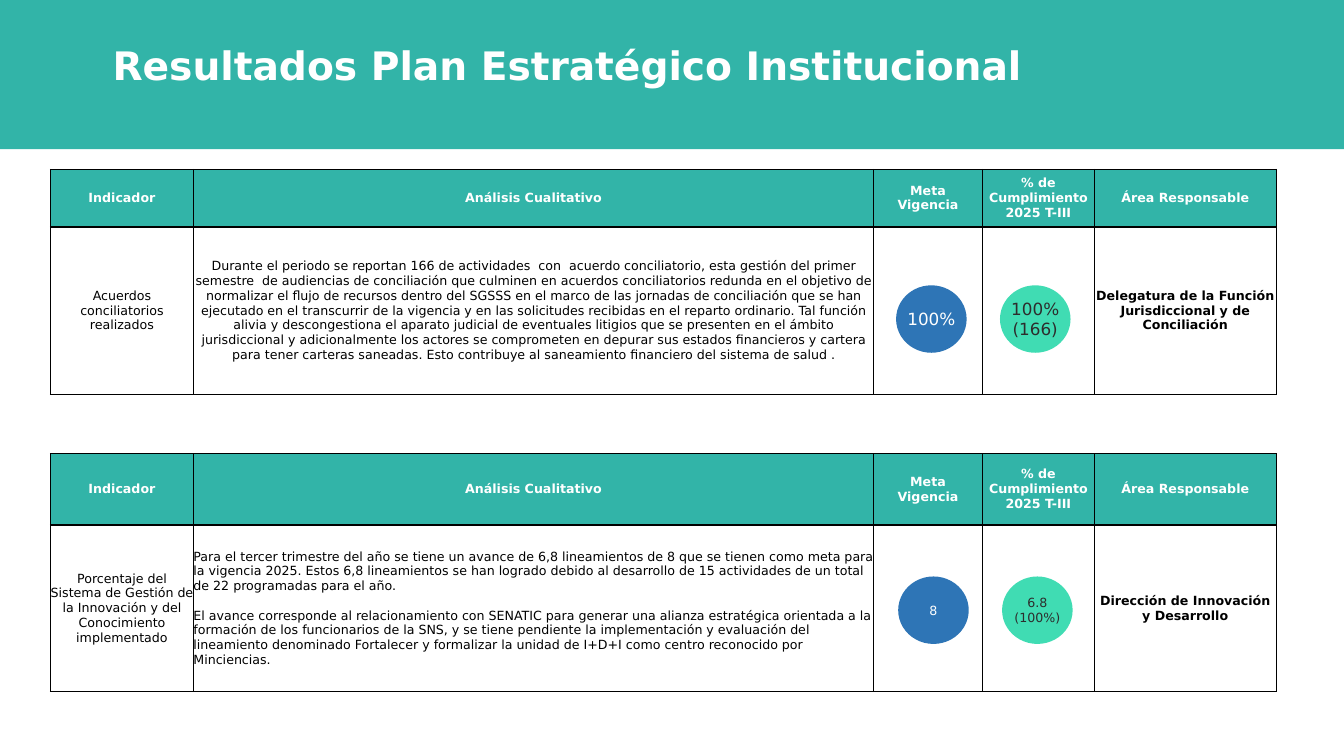
from lxml import etree
from pptx import Presentation
from pptx.dml.color import RGBColor
from pptx.enum.shapes import MSO_SHAPE
from pptx.enum.text import MSO_ANCHOR, MSO_AUTO_SIZE, PP_ALIGN
from pptx.oxml.ns import qn
from pptx.util import Pt

CENTER, LEFT = PP_ALIGN.CENTER, PP_ALIGN.LEFT
TOP, MIDDLE = MSO_ANCHOR.TOP, MSO_ANCHOR.MIDDLE
NO_AUTOFIT = MSO_AUTO_SIZE.NONE
RECTANGLE, OVAL = MSO_SHAPE.RECTANGLE, MSO_SHAPE.OVAL

FONT = "DejaVu Sans"
TEAL, BLUE, MINT = "32B4A8", "2E75B6", "40DCB3"
WHITE, BLACK, CHARCOAL = "FFFFFF", "000000", "2D2D2D"

TABLE_LEFT = 36
COLUMN_WIDTHS = [102.2, 485.8, 77.8, 79.9, 129.9]
HEADERS = ["Indicador", "Análisis Cualitativo", "Meta\vVigencia",
           "% de Cumplimiento 2025 T-III", "Área Responsable"]
CIRCLE_WIDTH, CIRCLE_HEIGHT, CIRCLE_STEP = 50.4, 48.2, 74.2

INDICATORS = [
    {
        "top": 121, "rows": [41, 120], "align": CENTER,
        "name": "Acuerdos conciliatorios realizados",
        "analysis": [
            "Durante el periodo se reportan 166 de actividades  con  acuerdo conciliatorio, "
            "esta gestión del primer semestre  de audiencias de conciliación que culminen en "
            "acuerdos conciliatorios redunda en el objetivo de normalizar el flujo de recursos "
            "dentro del SGSSS en el marco de las jornadas de conciliación que se han ejecutado "
            "en el transcurrir de la vigencia y en las solicitudes recibidas en el reparto "
            "ordinario. Tal función alivia y descongestiona el aparato judicial de eventuales "
            "litigios que se presenten en el ámbito jurisdiccional y adicionalmente los actores "
            "se comprometen en depurar sus estados financieros y cartera para tener carteras "
            "saneadas. Esto contribuye al saneamiento financiero del sistema de salud ."],
        "area": "Delegatura de la Función Jurisdiccional y de Conciliación",
        "circles": (640.1, 203.8), "size": 12,
        "goal": ["100%"], "result": ["100%", "(166)"],
    },
    {
        "top": 324, "rows": [51.2, 118.8], "align": LEFT,
        "name": "Porcentaje del Sistema de Gestión de la Innovación y del "
                "Conocimiento implementado",
        "analysis": [
            "Para el tercer trimestre del año se tiene un avance de 6,8 lineamientos de 8 que se "
            "tienen como meta para la vigencia 2025. Estos 6,8 lineamientos se han logrado debido "
            "al desarrollo de 15 actividades de un total de 22 programadas para el año.",
            "El avance corresponde al relacionamiento con SENATIC para generar una alianza "
            "estratégica orientada a la formación de los funcionarios de la SNS, y se tiene "
            "pendiente la implementación y evaluación del lineamiento denominado Fortalecer y "
            "formalizar la unidad de I+D+I como centro reconocido por Minciencias."],
        "area": "Dirección de Innovación y Desarrollo",
        "circles": (641.6, 411.8), "size": 9,
        "goal": ["8"], "result": ["6.8", "(100%)"],
    },
]


def write(frame, lines, size, color, bold=False, align=CENTER, anchor=MIDDLE, gap=0):
    """Fill a text frame without margins; gap is the space between paragraphs."""
    frame.margin_left = frame.margin_right = frame.margin_top = frame.margin_bottom = 0
    frame.vertical_anchor = anchor
    for index, line in enumerate(lines):
        para = frame.add_paragraph() if index else frame.paragraphs[0]
        para.text = line
        para.alignment = align
        para.space_before = Pt(gap if index else 0)
        para.font.name = FONT
        para.font.size = Pt(size)
        para.font.bold = bold
        para.font.color.rgb = RGBColor.from_string(color)


def add_plain_shape(page, kind, left, top, width, height, color):
    shape = page.shapes.add_shape(kind, Pt(left), Pt(top), Pt(width), Pt(height))
    shape.shadow.inherit = False
    shape.fill.solid()
    shape.fill.fore_color.rgb = RGBColor.from_string(color)
    shape.line.fill.background()
    return shape


deck = Presentation()
deck.slide_width, deck.slide_height = Pt(960), Pt(540)
page = deck.slides.add_slide(deck.slide_layouts[5])

title = page.shapes.title
title.left, title.top, title.width, title.height = Pt(72), Pt(26), Pt(666), Pt(41)
title.text_frame.auto_size = NO_AUTOFIT
write(title.text_frame, ["Resultados Plan Estratégico Institucional"], 28, WHITE, bold=True)

band = add_plain_shape(page, RECTANGLE, 0, 0, 960, 106.6, TEAL)
title.element.addprevious(band.element)

for indicator in INDICATORS:
    heights = indicator["rows"]
    frame = page.shapes.add_table(2, len(HEADERS), Pt(TABLE_LEFT), Pt(indicator["top"]),
                                  Pt(sum(COLUMN_WIDTHS)), Pt(sum(heights)))
    table = frame.table
    table.first_row = table.horz_banding = False
    for column, width in zip(table.columns, COLUMN_WIDTHS):
        column.width = Pt(width)
    for row, height in zip(table.rows, heights):
        row.height = Pt(height)

    body = [[indicator["name"]], indicator["analysis"], [], [], [indicator["area"]]]
    for number, (header, lines) in enumerate(zip(HEADERS, body)):
        head_cell, body_cell = table.cell(0, number), table.cell(1, number)
        write(head_cell.text_frame, [header], 9, WHITE, bold=True)
        write(body_cell.text_frame, lines, 9, BLACK, bold=number == 4,
              align=indicator["align"] if number == 1 else CENTER, gap=10.5)
        for cell in (head_cell, body_cell):
            cell.margin_left = cell.margin_right = cell.margin_top = cell.margin_bottom = 0
            cell.vertical_anchor = MIDDLE
            properties = cell._tc.get_or_add_tcPr()
            for side in ("lnL", "lnR", "lnT", "lnB"):
                shared = (cell is head_cell and side == "lnB") or (
                    cell is body_cell and side == "lnT")
                border = etree.SubElement(properties, qn(f"a:{side}"),
                                          w=str(Pt(2 if shared else 1)))
                fill = etree.SubElement(border, qn("a:solidFill"))
                etree.SubElement(fill, qn("a:srgbClr"), val=BLACK)
        head_cell.fill.solid()
        head_cell.fill.fore_color.rgb = RGBColor.from_string(TEAL)
        body_cell.fill.background()

    left, top = indicator["circles"]
    circles = [(indicator["goal"], BLUE, WHITE), (indicator["result"], MINT, CHARCOAL)]
    for number, (lines, color, text_color) in enumerate(circles):
        circle = add_plain_shape(page, OVAL, left + number * CIRCLE_STEP, top,
                                 CIRCLE_WIDTH, CIRCLE_HEIGHT, color)
        circle.text_frame.word_wrap = False
        write(circle.text_frame, lines, indicator["size"], text_color)

deck.save("out.pptx")
